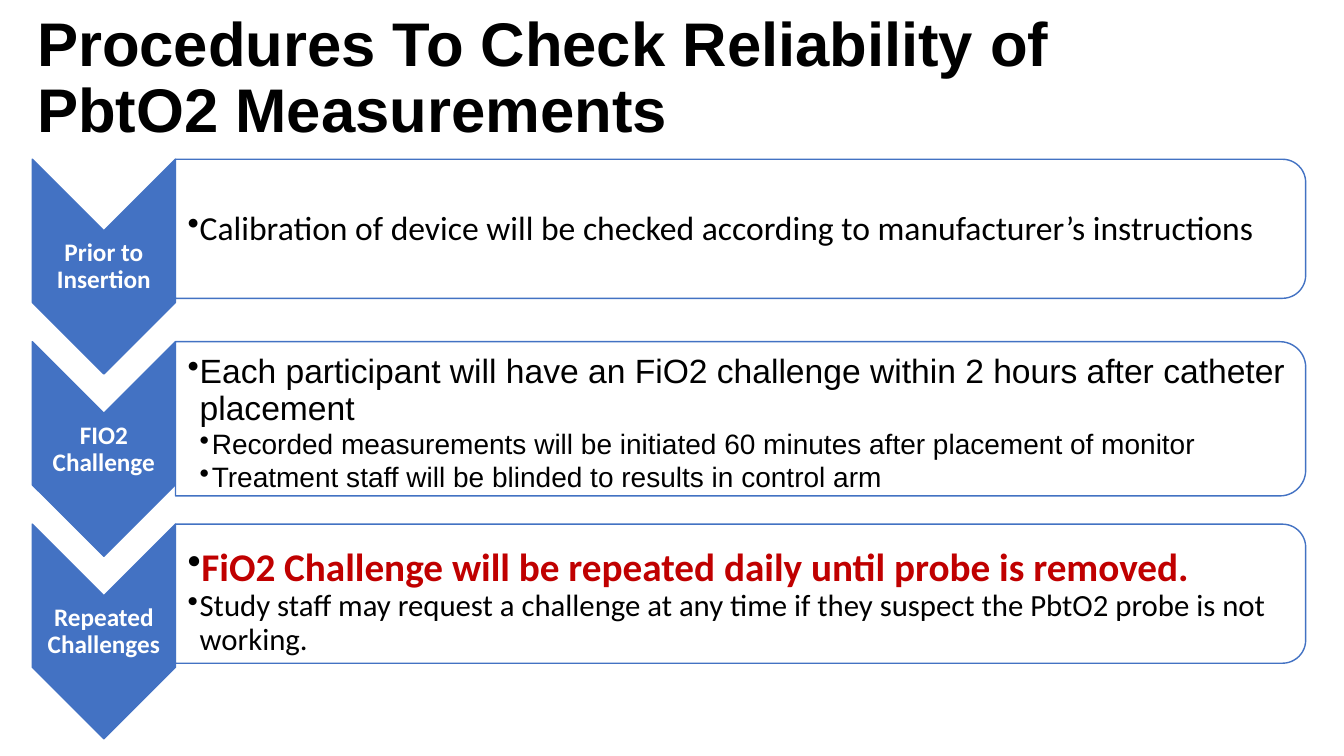
from pptx import Presentation
from pptx.dml.color import RGBColor
from pptx.enum.shapes import MSO_SHAPE
from pptx.enum.text import MSO_ANCHOR, PP_ALIGN
from pptx.oxml.ns import qn
from pptx.util import Inches, Pt
from lxml import etree

CHEVRON = MSO_SHAPE.CHEVRON
PANEL = MSO_SHAPE.ROUND_2_SAME_RECTANGLE
MIDDLE, BOTTOM = MSO_ANCHOR.MIDDLE, MSO_ANCHOR.BOTTOM
CENTER, LEFT = PP_ALIGN.CENTER, PP_ALIGN.LEFT
BLUE, WHITE, BLACK, RED = "4372C3", "FFFFFF", "000000", "C00000"

FIRST_TOP, ROW_STEP = 1.58, 1.81
CHEVRON_LEFT, CHEVRON_WIDTH, CHEVRON_HEIGHT = 0.32, 1.42, 2.13
PANEL_LEFT, PANEL_WIDTH = 1.74, 11.21
BULLET_INDENT = 0.12


def color(value):
    return RGBColor.from_string(value)


class ProcedureSlide:
    def __init__(self, page):
        self.shapes = page.shapes

    def turned_shape(self, kind, left, top, width, height, fill, adjustments, opacity=100):
        shape = self.shapes.add_shape(
            kind,
            Inches(left + (width - height) / 2),
            Inches(top + (height - width) / 2),
            Inches(height),
            Inches(width),
        )
        shape.rotation = 90
        shape.shadow.inherit = False
        for index, value in enumerate(adjustments):
            shape.adjustments[index] = value
        shape.fill.solid()
        shape.fill.fore_color.rgb = color(fill)
        shape.line.color.rgb = color(BLUE)
        shape.line.width = Pt(1)
        if opacity < 100:
            fill_color = shape.element.spPr.find(qn("a:solidFill"))[0]
            etree.SubElement(fill_color, qn("a:alpha"), val=str(opacity * 1000))

    def text_box(self, left, top, width, height, anchor, insets):
        box = self.shapes.add_textbox(Inches(left), Inches(top), Inches(width), Inches(height))
        frame = box.text_frame
        frame.word_wrap = True
        frame.vertical_anchor = anchor
        frame.margin_left, frame.margin_top, frame.margin_right, frame.margin_bottom = map(Inches, insets)
        return frame

    def fill_paragraph(self, para, text, size, font, ink, bold=False, align=LEFT):
        para.text = text
        para.alignment = align
        para.line_spacing = 0.9
        para.font.size = Pt(size)
        para.font.name = font
        para.font.bold = bold
        para.font.color.rgb = color(ink)

    def add_bullet(self, para, level):
        para.level = level
        para.space_before = Pt(2.2 if level > 1 else 0)
        properties = para._p.get_or_add_pPr()
        properties.set("marL", str(Inches(BULLET_INDENT * level)))
        properties.set("indent", str(-Inches(BULLET_INDENT)))
        bullet_color = etree.Element(qn("a:buClr"))
        etree.SubElement(bullet_color, qn("a:srgbClr"), val=BLACK)
        bullet = etree.Element(qn("a:buChar"), char="•")
        defaults = properties.find(qn("a:defRPr"))
        defaults.addprevious(bullet_color)
        defaults.addprevious(bullet)

    def title(self, text):
        frame = self.text_box(0.27, 0.4, 10.71, 1.1, BOTTOM, (0.1, 0.05, 0.1, 0.05))
        self.fill_paragraph(frame.paragraphs[0], text, 44, "Arial", BLACK, True)

    def step(self, top, label, panel_height, text_top, text_height, bullets):
        self.turned_shape(CHEVRON, CHEVRON_LEFT, top, CHEVRON_WIDTH, CHEVRON_HEIGHT, BLUE, [0.5])
        frame = self.text_box(CHEVRON_LEFT, top + 0.75, CHEVRON_WIDTH, 0.64, MIDDLE, [0.01] * 4)
        self.fill_paragraph(frame.paragraphs[0], label, 18, "Calibri", WHITE, True, CENTER)
        self.turned_shape(PANEL, PANEL_LEFT, top, PANEL_WIDTH, panel_height, WHITE, [0.167, 0], 90)
        frame = self.text_box(PANEL_LEFT, text_top, 11.15, text_height, MIDDLE, (0.12, 0.01, 0.01, 0.01))
        for index, (level, *style) in enumerate(bullets):
            para = frame.add_paragraph() if index else frame.paragraphs[0]
            self.fill_paragraph(para, *style)
            self.add_bullet(para, level)


STEPS = [
    ("Prior to Insertion", 1.38, 1.65, 1.25, [
        (1, "Calibration of device will be checked according to manufacturer’s instructions", 24, "Calibri", BLACK),
    ]),
    ("FIO2 Challenge", 1.53, 3.71, 1, [
        (1, "Each participant will have an FiO2 challenge within 2 hours after catheter placement", 24, "Arial", BLACK),
        (2, "Recorded measurements will be initiated 60 minutes after placement of monitor", 20, "Arial", BLACK),
        (2, "Treatment staff will be blinded to results in control arm", 20, "Arial", BLACK),
    ]),
    ("Repeated Challenges", 1.38, 5.35, 1.25, [
        (1, "FiO2 Challenge will be repeated daily until probe is removed.", 28, "Calibri", RED, True),
        (1, "Study staff may request a challenge at any time if they suspect the PbtO2 probe is not working.",
         22, "Calibri", BLACK),
    ]),
]


def main():
    deck = Presentation()
    deck.slide_width, deck.slide_height = Inches(13.33), Inches(7.5)
    slide = ProcedureSlide(deck.slides.add_slide(deck.slide_layouts[6]))
    slide.title("Procedures To Check Reliability of PbtO2 Measurements")
    for row, step in enumerate(STEPS):
        slide.step(FIRST_TOP + row * ROW_STEP, *step)
    deck.save("out.pptx")


if __name__ == "__main__":
    main()
